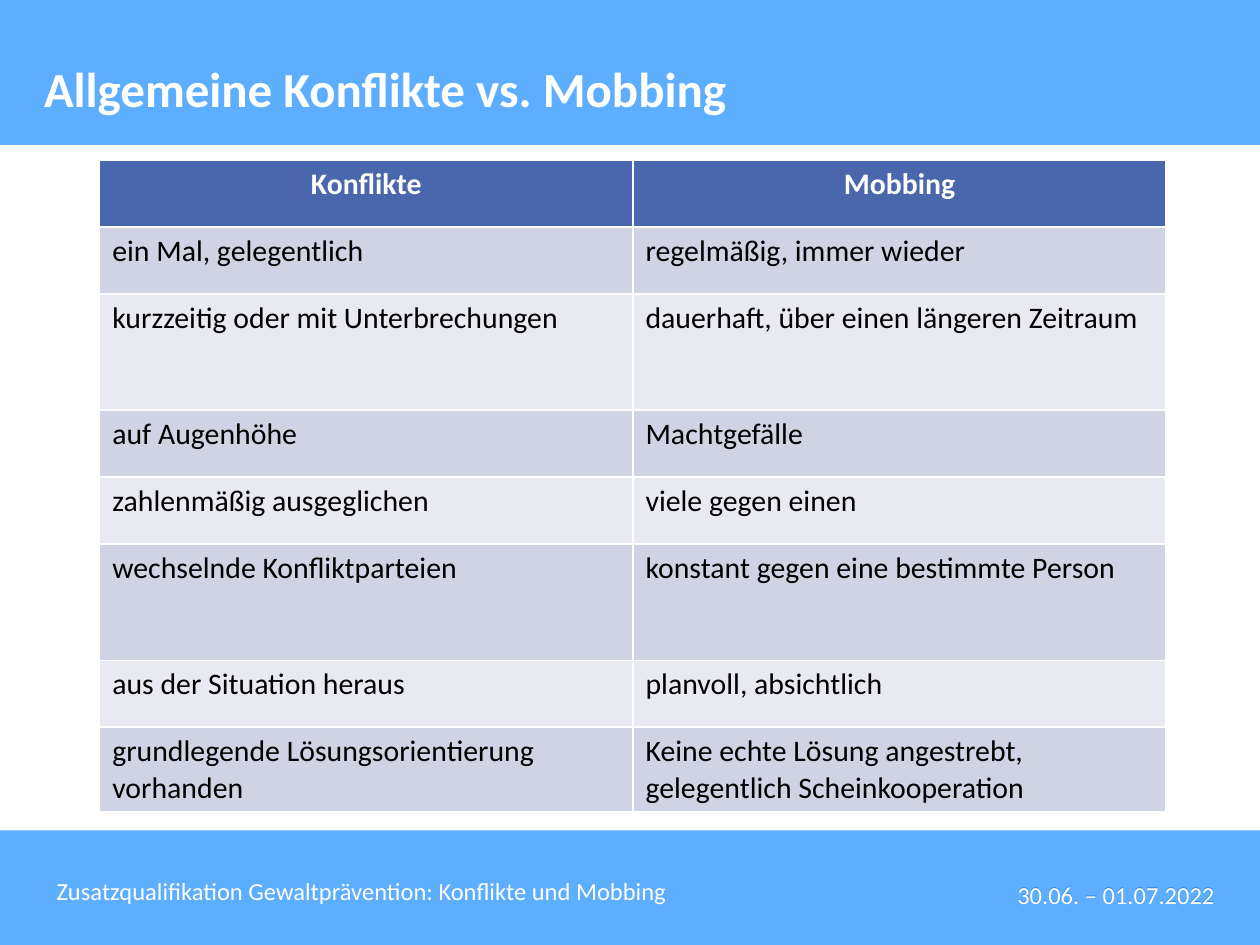
import pptx
import pptx.dml.color
import pptx.enum.shapes
import pptx.enum.text
import pptx.oxml.ns
import pptx.util
from lxml import etree

Cm = pptx.util.Cm
ALIGN = pptx.enum.text.PP_ALIGN
ANCHOR = pptx.enum.text.MSO_ANCHOR

ROWS = [
    (1.35, "Konflikte", "Mobbing"),
    (1.35, "ein Mal, gelegentlich", "regelmäßig, immer wieder"),
    (2.34, "kurzzeitig oder mit Unterbrechungen", "dauerhaft, über einen längeren Zeitraum"),
    (1.35, "auf Augenhöhe", "Machtgefälle"),
    (1.35, "zahlenmäßig ausgeglichen", "viele gegen einen"),
    (2.34, "wechselnde Konfliktparteien", "konstant gegen eine bestimmte Person"),
    (1.35, "aus der Situation heraus", "planvoll, absichtlich"),
    (1.7, "grundlegende Lösungsorientierung vorhanden",
     "Keine echte Lösung angestrebt, gelegentlich Scheinkooperation"),
]
DATE = "30.06. – 01.07.2022"


def rgb(value):
    return pptx.dml.color.RGBColor.from_string(value)


class Deck:
    """Holds the style and the current slide and draws each kind of element."""

    font = "Calibri"
    band_color = "3399FF"
    header_fill = "4A66AC"
    row_fills = ("E9EAF1", "D0D3E3")

    def __init__(self, prs):
        self.s = prs.slides.add_slide(prs.slide_layouts[6])

    def paragraph(self, p, text, size, color, bold=False, align=ALIGN.LEFT):
        p.text = text
        p.alignment = align
        p.font.name = self.font
        p.font.size = pptx.util.Pt(size)
        p.font.bold = bold
        p.font.color.rgb = rgb(color)

    def text(self, box, text, size, color="FFFFFF", anchor=ANCHOR.TOP,
             insets=(0.25, 0.13), **style):
        tf = self.s.shapes.add_textbox(*map(Cm, box)).text_frame
        tf.word_wrap = True
        tf.vertical_anchor = anchor
        tf.margin_left = tf.margin_right = Cm(insets[0])
        tf.margin_top = tf.margin_bottom = Cm(insets[1])
        self.paragraph(tf.paragraphs[0], text, size, color, **style)

    def date(self, top, color):
        self.text((12.09, top, 12.4, 1.02), DATE, 14, color, ANCHOR.MIDDLE,
                  (0, 0), align=ALIGN.RIGHT)

    def band(self, top, height):
        sp = self.s.shapes.add_shape(pptx.enum.shapes.MSO_SHAPE.RECTANGLE,
                                     0, Cm(top), Cm(25.4), Cm(height))
        sp.shadow.inherit = False
        sp.line.fill.background()
        sp.fill.solid()
        sp.fill.fore_color.rgb = rgb(self.band_color)
        qn = pptx.oxml.ns.qn
        clr = next(sp.element.spPr.iter(qn("a:srgbClr")))
        etree.SubElement(clr, qn("a:alpha"), val="79000")

    def table(self, left, top, col_width, rows):
        height = sum(row[0] for row in rows)
        table = self.s.shapes.add_table(len(rows), 2, Cm(left), Cm(top),
                                        Cm(2 * col_width), Cm(height)).table
        for i, (row_height, *texts) in enumerate(rows):
            table.rows[i].height = Cm(row_height)
            for cell, text in zip(table.rows[i].cells, texts):
                cell.fill.solid()
                cell.fill.fore_color.rgb = rgb(self.row_fills[i % 2] if i else self.header_fill)
                self.paragraph(cell.text_frame.paragraphs[0], text, 17,
                               "000000" if i else "FFFFFF", i == 0,
                               ALIGN.LEFT if i else ALIGN.CENTER)


def main():
    prs = pptx.Presentation()
    prs.slide_width, prs.slide_height = Cm(25.4), Cm(19.05)
    deck = Deck(prs)
    deck.date(17.5, "143F6A")
    deck.band(0, 2.92)
    deck.band(16.74, 2.31)
    deck.text((0.89, 17.53, 13.8, 1.02),
              "Zusatzqualifikation Gewaltprävention: Konflikte und Mobbing", 14)
    deck.date(17.53, "FFFFFF")
    deck.text((0.89, 0.76, 19.6, 1.8), "Allgemeine Konflikte vs. Mobbing", 28,
              anchor=ANCHOR.BOTTOM, insets=(0, 0.2), bold=True)
    deck.table(2.01, 3.23, 10.75, ROWS)
    prs.save("out.pptx")


if __name__ == "__main__":
    main()
